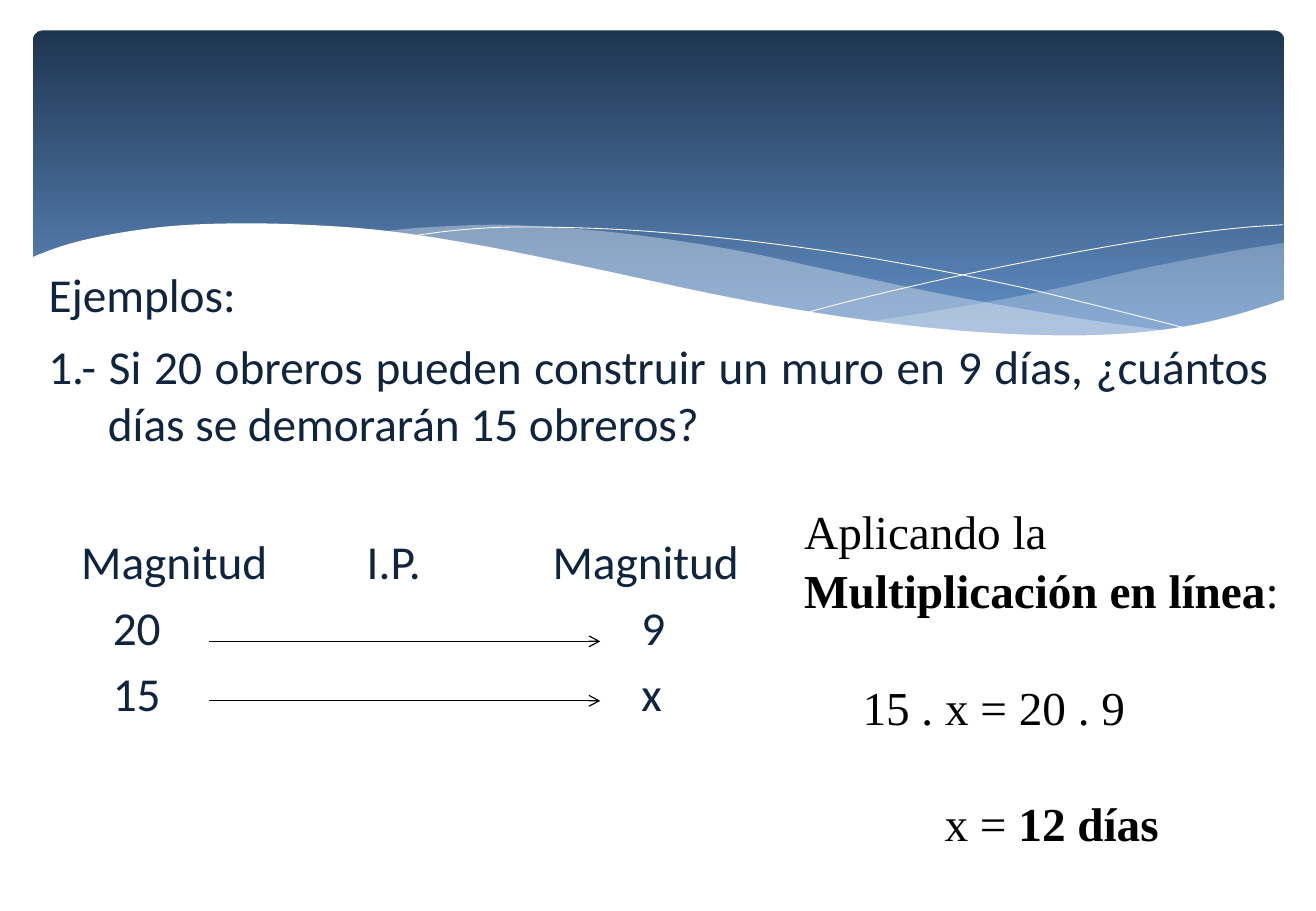
from lxml.etree import SubElement
from pptx import Presentation
from pptx.dml.color import RGBColor
from pptx.enum.shapes import MSO_CONNECTOR as CONNECTOR, MSO_SHAPE as SHAPE
from pptx.enum.text import MSO_ANCHOR as ANCHOR, PP_ALIGN as ALIGN
from pptx.oxml.ns import qn
from pptx.util import Pt

PX = 9144  # one px is a hundredth of an inch
NAVY, BLACK, WHITE, MIST = "0F243E", "000000", "FFFFFF", "E7EDF5"

# Wave outlines, as points that a smooth curve passes through
RIGHT_CREST = [(1057, 200), (1013, 207), (966, 216), (932, 223), (872, 237),
               (816, 248), (765, 257), (716, 265)]
RIGHT_TROUGH = [(716, 265), (764, 271), (820, 276), (882, 278), (945, 274),
                (998, 265), (1029, 257), (1057, 247)]
LONG_CREST = [(967, 273), (907, 265), (840, 254), (765, 240), (681, 222),
              (616, 208), (557, 198), (503, 191), (455, 187), (411, 185),
              (373, 186), (339, 188), (310, 191)]
LONG_TROUGH = [(310, 191), (350, 196), (415, 207), (487, 222), (574, 240),
               (651, 255), (721, 266), (783, 274), (837, 277), (886, 278),
               (929, 277), (967, 273)]
FALLING_LINE = [(335, 195), (372, 190), (420, 187), (488, 188), (552, 192),
                (630, 200), (720, 213), (824, 233), (900, 251), (983, 272)]
RISING_LINE = [(665, 257), (707, 246), (780, 229), (873, 210), (954, 196),
               (1016, 188), (1056, 185)]
PAGE_EDGE = [(1059, 246), (1018, 259), (974, 269), (921, 275), (860, 276),
             (787, 272), (701, 262), (601, 245), (484, 220), (395, 202),
             (317, 190), (249, 185), (191, 184), (143, 186), (103, 191),
             (72, 197), (50, 203), (31, 210), (25, 213)]
PAGE_CORNERS = [(25, 329), (1059, 329)]


def rgb(code):
    return RGBColor.from_string(code)


def place(shape, left, top, width, height):
    shape.left, shape.top = left * PX, top * PX
    shape.width, shape.height = width * PX, height * PX


def smooth(points, steps=6):
    """Catmull-Rom curve through the points."""
    ends = [points[0]] + points + [points[-1]]
    curve = []
    for a, b, c, d in zip(ends, ends[1:], ends[2:], ends[3:]):
        for t in (step / steps for step in range(steps)):
            curve.append(tuple(
                (2 * q + (r - p) * t + (2 * p - 5 * q + 4 * r - s) * t ** 2
                 + (3 * q - p - 3 * r + s) * t ** 3) / 2
                for p, q, r, s in zip(a, b, c, d)))
    return curve + [points[-1]]


def add_outline(slide, points, closed):
    spots = [(round(x * PX), round(y * PX)) for x, y in points]
    builder = slide.shapes.build_freeform(*spots[0], scale=1.0)
    builder.add_line_segments(spots[1:], close=closed)
    outline = builder.convert_to_shape()
    outline.shadow.inherit = False
    return outline


def add_wave(slide, points, color, opacity=100):
    wave = add_outline(slide, points, True)
    wave.fill.solid()
    wave.fill.fore_color.rgb = rgb(color)
    wave.line.fill.background()
    if opacity < 100:
        tint = wave.fill._xPr.find(qn("a:solidFill"))[0]
        SubElement(tint, qn("a:alpha"), val=str(opacity * 1000))


def add_wave_line(slide, points):
    thread = add_outline(slide, smooth(points), False)
    thread.fill.background()
    thread.line.color.rgb = rgb(WHITE)
    thread.line.width = Pt(0.5)


def add_banner(slide):
    banner = slide.shapes.add_shape(SHAPE.ROUNDED_RECTANGLE, 0, 0, 0, 0)
    place(banner, 27, 25, 1030, 270)
    banner.adjustments[0] = 0.03
    banner.shadow.inherit = False
    banner.line.fill.background()
    banner.fill.gradient()
    banner.fill.gradient_angle = 270
    shades = [(0, "1E3550"), (0.9, "608DC3")]
    for stop, (position, color) in zip(banner.fill.gradient_stops, shades):
        stop.position = position
        stop.color.rgb = rgb(color)


def add_text(slide, left, top, width, height):
    frame = slide.shapes.add_textbox(0, 0, 0, 0)
    place(frame, left, top, width, height)
    frame.text_frame.word_wrap = True
    return frame.text_frame


def style(paragraph, font, color):
    for run in paragraph.runs:
        run.font.name = font
        run.font.size = Pt(28)
        run.font.color.rgb = rgb(color)


def indent(paragraph, margin, first=0):
    properties = paragraph._p.get_or_add_pPr()
    properties.set("marL", str(margin * PX))
    properties.set("indent", str(first * PX))


def set_tabs(paragraph, stops):
    tabs = SubElement(paragraph._p.get_or_add_pPr(), qn("a:tabLst"))
    for stop in stops:
        SubElement(tabs, qn("a:tab"), pos=str(stop * PX), algn="l")


def add_arrow(slide, left, right, y):
    arrow = slide.shapes.add_connector(
        CONNECTOR.STRAIGHT, left * PX, y * PX, right * PX, y * PX)
    arrow.line.color.rgb = rgb(BLACK)
    arrow.line.width = Pt(0.75)
    SubElement(arrow.line._get_or_add_ln(), qn("a:tailEnd"), type="arrow")
    SubElement(arrow._element.spPr, qn("a:effectLst"))


def add_title(slide):
    title = slide.shapes.title
    place(title, 30, 210, 236, 63)
    title.text_frame.text = "Ejemplos:"
    title.text_frame.vertical_anchor = ANCHOR.MIDDLE
    heading = title.text_frame.paragraphs[0]
    heading.alignment = ALIGN.LEFT
    style(heading, "Calibri", NAVY)


def add_problem(slide):
    problem = add_text(slide, 30, 273, 1024, 118)
    problem.text = ("1.- Si 20 obreros pueden construir un muro en 9 días, "
                    "¿cuántos días se demorarán 15 obreros?")
    question = problem.paragraphs[0]
    question.alignment = ALIGN.JUSTIFY
    indent(question, 49, -49)
    style(question, "Calibri", NAVY)


def add_magnitudes(slide):
    magnitudes = add_text(slide, 57, 433, 564, 173)
    rows = [("Magnitud\tI.P.\tMagnitud", (235, 388)),
            ("\t20\t9", (26, 461)), ("\t15\tx", (26, 461))]
    magnitudes.text = "\n".join(text for text, _ in rows)
    for row, (_, stops) in zip(magnitudes.paragraphs, rows):
        set_tabs(row, stops)
        style(row, "Calibri", NAVY)
    for row in magnitudes.paragraphs[1:]:
        row.space_before = Pt(5.6)
    for y in (528, 577):
        add_arrow(slide, 172, 494, y)


def add_solution(slide):
    solution = add_text(slide, 652, 406, 417, 387)
    # Each line: its runs with their weight, then the space before
    lines = [([("Aplicando la", False)], 0),
             ([("Multiplicación en línea", True), (":", False)], 0),
             ([("15 . x = 20 . 9", False)], 33.8),
             ([("x = ", False), ("12 días", True)], 33.8)]
    for number, (parts, gap) in enumerate(lines):
        line = solution.add_paragraph() if number else solution.paragraphs[0]
        line.line_spacing = 1.05
        if gap:
            line.space_before = Pt(gap)
        for text, bold in parts:
            run = line.add_run()
            run.text = text
            run.font.bold = bold
        style(line, "Times New Roman", BLACK)
    equation, answer = solution.paragraphs[2:]
    indent(equation, 48)
    indent(answer, 10)
    answer.alignment = ALIGN.CENTER


def main():
    deck = Presentation()
    deck.slide_width, deck.slide_height = 1083 * PX, 750 * PX
    slide = deck.slides.add_slide(deck.slide_layouts[5])

    # Banner with waves
    add_banner(slide)
    add_wave(slide, smooth(RIGHT_CREST) + smooth(RIGHT_TROUGH), MIST, 29)
    add_wave(slide, smooth(LONG_CREST) + smooth(LONG_TROUGH), MIST, 40)
    add_wave_line(slide, FALLING_LINE)
    add_wave_line(slide, RISING_LINE)
    add_wave(slide, smooth(PAGE_EDGE) + PAGE_CORNERS, WHITE)

    # The title goes above the banner
    slide.shapes._spTree.append(slide.shapes.title._element)
    add_title(slide)

    # Worked example
    add_problem(slide)
    add_magnitudes(slide)
    add_solution(slide)
    deck.save("out.pptx")


if __name__ == "__main__":
    main()
